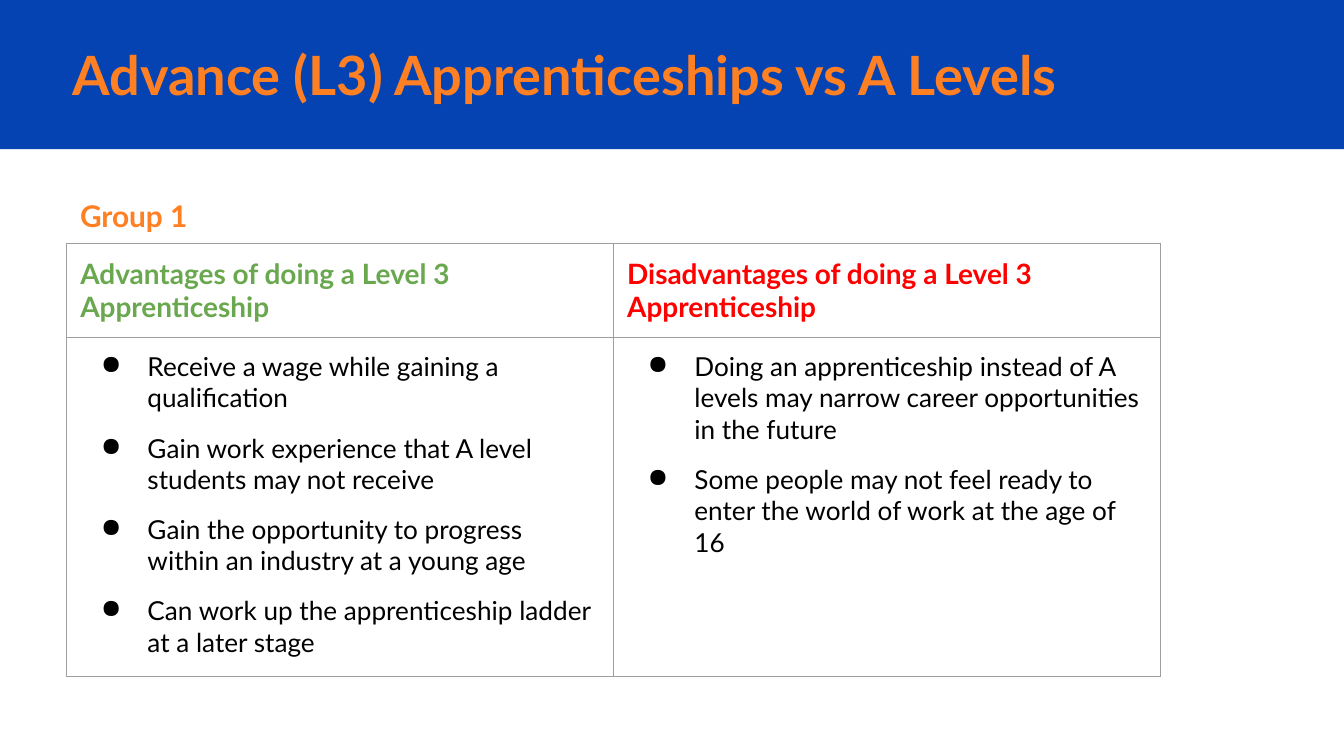
import pptx
import pptx.dml.color
import pptx.enum.shapes
import pptx.enum.text
import pptx.oxml.ns
import pptx.util
from lxml import etree

Pt = pptx.util.Pt
RGBColor = pptx.dml.color.RGBColor
MIDDLE = pptx.enum.text.MSO_ANCHOR.MIDDLE
TOP = pptx.enum.text.MSO_ANCHOR.TOP
qn = pptx.oxml.ns.qn

BLUE = RGBColor(0x05, 0x43, 0xB3)
ORANGE = RGBColor(0xFF, 0x80, 0x22)
GREEN = RGBColor(0x6A, 0xA8, 0x4F)
RED = RGBColor(0xFF, 0x00, 0x00)
BLACK = RGBColor(0x00, 0x00, 0x00)
GREY = RGBColor(0x9E, 0x9E, 0x9E)

FONT = "Lato"
INSET = 7.2

COLUMNS = [
    ("Advantages of doing a Level 3 Apprenticeship", GREEN, [
        "Receive a wage while gaining a qualification",
        "Gain work experience that A level students may not receive",
        "Gain the opportunity to progress within an industry at a young age",
        "Can work up the apprenticeship ladder at a later stage",
    ]),
    ("Disadvantages of doing a Level 3 Apprenticeship", RED, [
        "Doing an apprenticeship instead of A levels may narrow career "
        "opportunities in the future",
        "Some people may not feel ready to enter the world of work at the age of 16",
    ]),
]


def write(paragraph, text, size, color, bold=False, bullet=False, before=0):
    """Put formatted text in a paragraph, with a hanging bullet if asked."""
    run = paragraph.add_run()
    run.text = text
    run.font.name = FONT
    run.font.size = Pt(size)
    run.font.bold = bold
    run.font.color.rgb = color
    paragraph.space_before = Pt(before)
    if bullet:
        properties = paragraph._p.get_or_add_pPr()
        properties.set("marL", str(Pt(36)))
        properties.set("indent", str(Pt(-25)))
        bullet_color = etree.SubElement(properties, qn("a:buClr"))
        etree.SubElement(bullet_color, qn("a:srgbClr"), val=str(color))
        etree.SubElement(properties, qn("a:buChar"), char="●")


def add_label(slide, box, text, anchor=TOP, **text_format):
    """Add a one-paragraph text box."""
    label = slide.shapes.add_textbox(*map(Pt, box))
    frame = label.text_frame
    frame.word_wrap = True
    frame.vertical_anchor = anchor
    frame.margin_left = frame.margin_right = Pt(INSET)
    frame.margin_top = frame.margin_bottom = Pt(INSET)
    write(frame.paragraphs[0], text, **text_format)


def add_header(slide, box):
    """Blue band with the slide title."""
    left, top, width, height = box
    band = slide.shapes.add_shape(
        pptx.enum.shapes.MSO_SHAPE.RECTANGLE, *map(Pt, box))
    band.shadow.inherit = False
    band.fill.solid()
    band.fill.fore_color.rgb = BLUE
    band.line.fill.background()
    add_label(slide, (left + 31.7, top + 15.1, width - 52.7, 49),
              "Advance (L3) Apprenticeships vs A Levels",
              anchor=MIDDLE, size=29, color=ORANGE, bold=True)


def style_cell(cell):
    """Clear the fill, set the margins and draw thin grey borders."""
    cell.margin_left = cell.margin_right = Pt(INSET)
    cell.margin_top = cell.margin_bottom = Pt(INSET)
    properties = cell._tc.get_or_add_tcPr()
    for side in ("lnL", "lnR", "lnT", "lnB"):
        border = etree.SubElement(properties, qn("a:" + side), w=str(Pt(0.75)))
        border_fill = etree.SubElement(border, qn("a:solidFill"))
        etree.SubElement(border_fill, qn("a:srgbClr"), val=str(GREY))
    cell.fill.background()


def add_comparison(slide, box):
    """Group label above a table of advantages and disadvantages."""
    left, top, width, height = box
    label_height, heading_height = 31.7, 50.4
    add_label(slide, (left, top, 322, 34), "Group 1",
              size=16, color=ORANGE, bold=True)

    table_height = height - label_height
    comparison = slide.shapes.add_table(
        2, len(COLUMNS), Pt(left), Pt(top + label_height),
        Pt(width), Pt(table_height)).table
    comparison.first_row = False
    comparison.horz_banding = False
    comparison.rows[0].height = Pt(heading_height)
    comparison.rows[1].height = Pt(table_height - heading_height)

    for column, (heading, color, points) in enumerate(COLUMNS):
        comparison.columns[column].width = Pt(width / len(COLUMNS))
        heading_cell = comparison.cell(0, column)
        points_cell = comparison.cell(1, column)
        style_cell(heading_cell)
        style_cell(points_cell)
        write(heading_cell.text_frame.paragraphs[0], heading,
              size=15, color=color, bold=True)
        frame = points_cell.text_frame
        for index, point in enumerate(points):
            paragraph = frame.add_paragraph() if index else frame.paragraphs[0]
            write(paragraph, point, size=14, color=BLACK, bullet=True,
                  before=10 if index else 0)


def main():
    deck = pptx.Presentation()
    deck.slide_width, deck.slide_height = Pt(720), Pt(405)
    slide = deck.slides.add_slide(deck.slide_layouts[6])
    add_header(slide, (0, 0, 720, 80))
    add_comparison(slide, (35.8, 98.6, 586, 263.7))
    deck.save("out.pptx")


if __name__ == "__main__":
    main()
